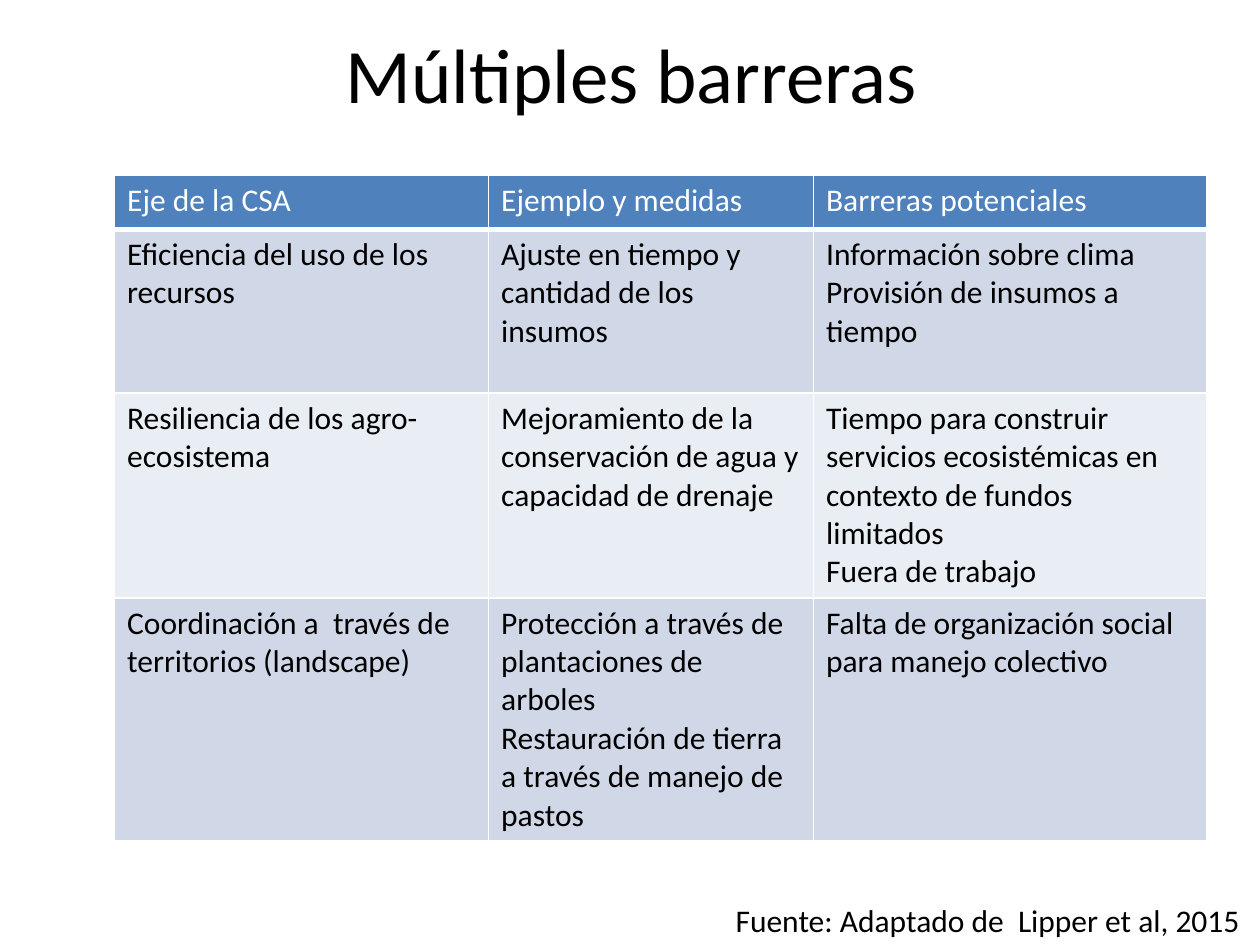
import pptx
import pptx.util
import pptx.dml.color
import pptx.enum.text
import pptx.oxml
import pptx.oxml.ns
from pptx.util import Cm

RGBColor = pptx.dml.color.RGBColor
BLACK = RGBColor(0x00, 0x00, 0x00)
WHITE = RGBColor(0xFF, 0xFF, 0xFF)
HEADER_BLUE = RGBColor(0x4F, 0x81, 0xBD)
BAND_DARK = RGBColor(0xD0, 0xD8, 0xE8)
BAND_LIGHT = RGBColor(0xE9, 0xED, 0xF4)
ALIGN = pptx.enum.text.PP_ALIGN
ANCHOR = pptx.enum.text.MSO_ANCHOR

COLUMN_WIDTHS = [7.54, 6.55, 7.92]
ROW_HEIGHTS = [1.09, 3.3, 4.06, 4.83]
BARRIERS = [
    ["Eje de la CSA", "Ejemplo y medidas", "Barreras potenciales"],
    ["Eficiencia del uso de los recursos",
     "Ajuste en tiempo y cantidad de los insumos",
     "Información sobre clima\nProvisión de insumos a tiempo"],
    ["Resiliencia de los agro-ecosistema",
     "Mejoramiento de la conservación de agua y capacidad de drenaje",
     "Tiempo para construir servicios ecosistémicas en contexto de fundos "
     "limitados\nFuera de trabajo"],
    ["Coordinación a  través de territorios (landscape)",
     "Protección a través de plantaciones de arboles\n"
     "Restauración de tierra a través de manejo de pastos",
     "Falta de organización social para manejo colectivo"],
]


def write_text(frame, text, size=18, color=BLACK, align=ALIGN.LEFT,
               anchor=ANCHOR.TOP, wrap=True):
    """Fill a text frame, one paragraph for each line of text."""
    frame.word_wrap = wrap
    frame.vertical_anchor = anchor
    frame.text = text
    for paragraph in frame.paragraphs:
        paragraph.alignment = align
        for run in paragraph.runs:
            run.font.name = "Calibri"
            run.font.size = pptx.util.Pt(size)
            run.font.color.rgb = color


def set_borders(cell, bottom):
    """Draw white cell borders; the bottom width is in points."""
    properties = cell._tc.get_or_add_tcPr()
    widths = {"lnL": 1, "lnR": 1, "lnT": 1, "lnB": bottom}
    for position, (side, width) in enumerate(widths.items()):
        properties.insert(position, pptx.oxml.parse_xml(
            f'<a:{side} {pptx.oxml.ns.nsdecls("a")} w="{pptx.util.Pt(width)}">'
            f'<a:solidFill><a:srgbClr val="{WHITE}"/></a:solidFill></a:{side}>'))


def add_title(slide, left, top, width, height):
    title = slide.shapes.add_textbox(left, top, width, height)
    write_text(title.text_frame, "Múltiples barreras", size=44,
               align=ALIGN.CENTER, anchor=ANCHOR.MIDDLE)


def add_barriers_table(slide, left, top):
    barriers = slide.shapes.add_table(
        len(ROW_HEIGHTS), len(COLUMN_WIDTHS), left, top,
        Cm(sum(COLUMN_WIDTHS)), Cm(sum(ROW_HEIGHTS))).table
    for column, width in zip(barriers.columns, COLUMN_WIDTHS):
        column.width = Cm(width)
    for row, height in zip(barriers.rows, ROW_HEIGHTS):
        row.height = Cm(height)

    # Header row, then alternating bands
    for row_index, texts in enumerate(BARRIERS):
        is_header = row_index == 0
        band = BAND_DARK if row_index % 2 else BAND_LIGHT
        for column_index, text in enumerate(texts):
            cell = barriers.cell(row_index, column_index)
            cell.fill.solid()
            cell.fill.fore_color.rgb = HEADER_BLUE if is_header else band
            write_text(cell.text_frame, text,
                       color=WHITE if is_header else BLACK)
            set_borders(cell, bottom=3 if is_header else 1)


def add_citation(slide, left, top, width, height):
    citation = slide.shapes.add_textbox(left, top, width, height)
    write_text(citation.text_frame, "Fuente: Adaptado de  Lipper et al, 2015",
               wrap=False)
    citation.text_frame.auto_size = pptx.enum.text.MSO_AUTO_SIZE.SHAPE_TO_FIT_TEXT


def main():
    deck = pptx.Presentation()
    deck.slide_width, deck.slide_height = Cm(25.4), Cm(19.05)
    slide = deck.slides.add_slide(deck.slide_layouts[6])
    add_barriers_table(slide, Cm(2.31), Cm(3.53))
    add_citation(slide, Cm(14.58), Cm(18.03), Cm(10.82), Cm(1.02))
    add_title(slide, Cm(1.3), Cm(0), Cm(22.86), Cm(2.92))
    deck.save("out.pptx")


if __name__ == "__main__":
    main()
